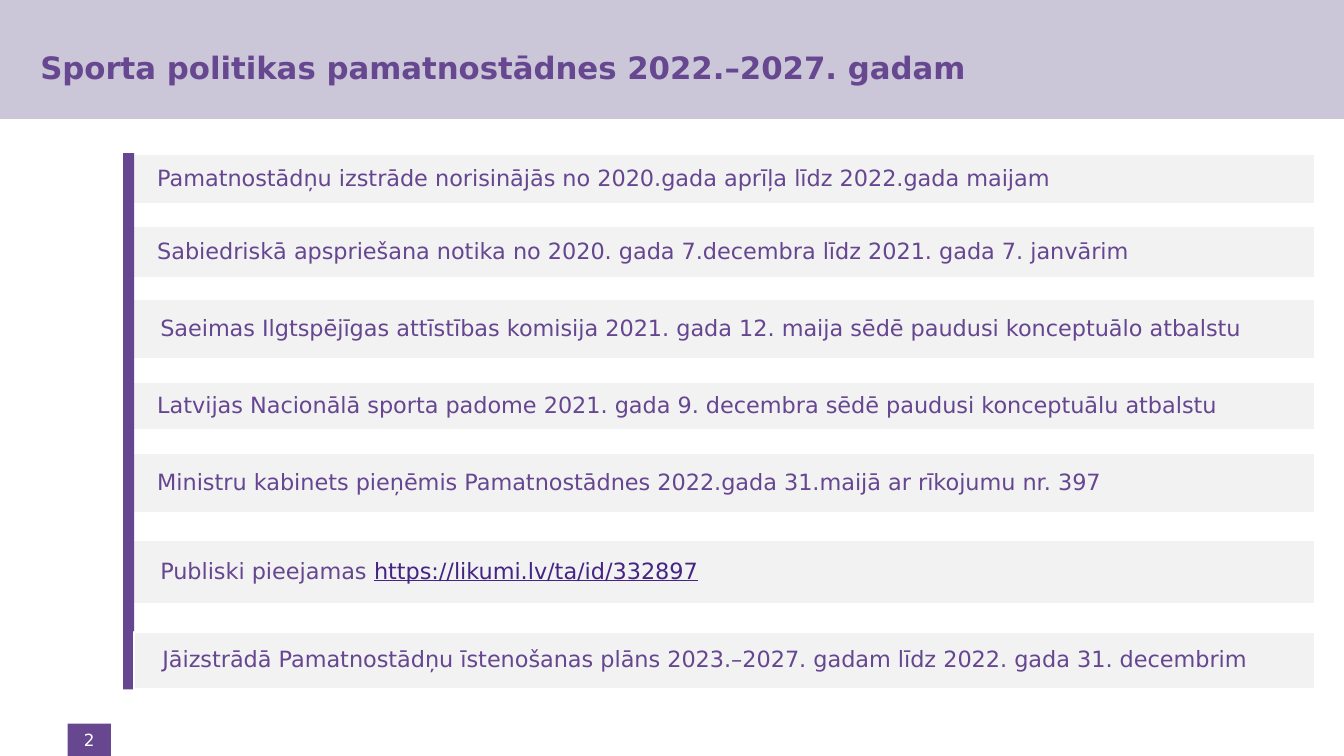
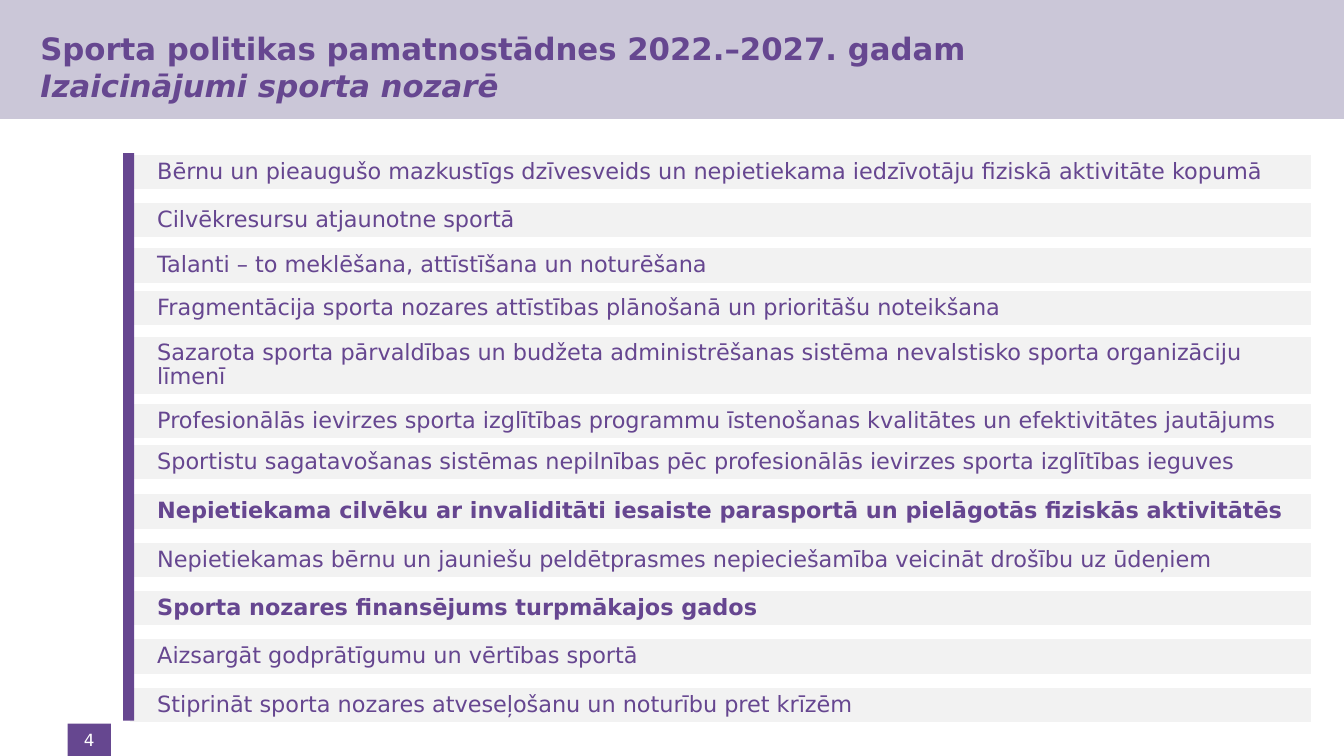
from pptx import Presentation
from pptx.dml.color import RGBColor
from pptx.enum import shapes, text
from pptx.util import Inches, Pt

FONT = "DejaVu Sans"
BAND, PURPLE, SPINE = "CBC7D8", "664790", "664690"
ROW_FILL, WHITE, LINK = "F2F2F2", "FFFFFF", "442583"

TITLE = "Sporta politikas pamatnostādnes 2022.–2027. gadam"
TITLE_STYLE = {"size": Pt(22), "bold": True, "color": PURPLE}
ROW_STYLE = {"size": Pt(16), "color": SPINE}
NUMBER_STYLE = {"size": Pt(12), "color": WHITE}
STRONG = {"bold": True}
ADDRESS = {"color": LINK, "underline": True}

TITLE_INSETS = (0, 0.05, 0.1, 0.05)
ROW_INSETS = (0.28, 0.05, 0.09, 0.05)
NUMBER_INSETS = (0.04, 0.04, 0.04, 0.04)

SPINE_WIDTH = 0.11
ROW_OFFSET = 0.06  # rows start underneath the spine

# Each row: top, height, runs of (words, style)
TIMELINE = [
    (1.52, 0.51, [("Pamatnostādņu izstrāde norisinājās no 2020.gada aprīļa "
                   "līdz 2022.gada maijam", {})]),
    (2.24, 0.52, [("Sabiedriskā apspriešana notika no 2020. gada 7.decembra "
                   "līdz 2021. gada 7. janvārim", {})]),
    (2.96, 0.61, [("Saeimas Ilgtspējīgas attīstības komisija 2021. gada "
                   "12. maija sēdē paudusi konceptuālo atbalstu", {})]),
    (3.79, 0.48, [("Latvijas Nacionālā sporta padome 2021. gada 9. decembra "
                   "sēdē paudusi konceptuālu atbalstu", {})]),
    (4.49, 0.6, [("Ministru kabinets pieņēmis Pamatnostādnes 2022.gada "
                  "31.maijā ar rīkojumu nr. 397", {})]),
    (5.35, 0.65, [("Publiski pieejamas ", {}),
                  ("https://likumi.lv/ta/id/332897", ADDRESS)]),
]
NEXT_STEP = (6.27, 0.57, [("Jāizstrādā Pamatnostādņu īstenošanas plāns "
                           "2023.–2027. gadam līdz 2022. gada 31. decembrim", {})])
INDENTS = {2.96: 0.03, 5.35: 0.03}

CHALLENGES = [
    (1.52, 0.37, [("Bērnu un pieaugušo mazkustīgs dzīvesveids un nepietiekama "
                   "iedzīvotāju fiziskā aktivitāte kopumā", {})]),
    (2.0, 0.37, [("Cilvēkresursu atjaunotne sportā", {})]),
    (2.45, 0.37, [("Talanti – to meklēšana, attīstīšana un noturēšana", {})]),
    (2.87, 0.37, [("Fragmentācija sporta nozares attīstības plānošanā un "
                   "prioritāšu noteikšana", {})]),
    (3.33, 0.59, [("Sazarota sporta pārvaldības un budžeta administrēšanas "
                   "sistēma nevalstisko sporta organizāciju līmenī", {})]),
    (3.99, 0.37, [("Profesionālās ievirzes sporta izglītības programmu "
                   "īstenošanas kvalitātes un efektivitātes jautājums", {})]),
    (4.4, 0.37, [("Sportistu sagatavošanas sistēmas nepilnības pēc "
                  "profesionālās ievirzes sporta izglītības ieguves", {})]),
    (4.89, 0.37, [("Nepietiekama cilvēku ar invaliditāti iesaiste parasportā "
                   "un pielāgotās fiziskās aktivitātēs", STRONG)]),
    (5.37, 0.37, [("Nepietiekamas bērnu un jauniešu peldētprasmes "
                   "nepieciešamība veicināt drošību uz ūdeņiem", {})]),
    (5.85, 0.37, [("Sporta nozares finansējums turpmākajos gados", STRONG)]),
    (6.33, 0.37, [("Aizsargāt godprātīgumu un vērtības sportā", {})]),
    (6.81, 0.37, [("Stiprināt sporta nozares atveseļošanu un noturību pret "
                   "krīzēm", {})]),
]


def color(hex_string):
    return RGBColor.from_string(hex_string)


def add_block(slide, box, fill, outline=None):
    block = slide.shapes.add_shape(shapes.MSO_SHAPE.RECTANGLE, *map(Inches, box))
    block.shadow.inherit = False
    block.fill.solid()
    block.fill.fore_color.rgb = color(fill)
    if outline:
        block.line.color.rgb = color(outline)
        block.line.width = Pt(2)
    else:
        block.line.fill.background()
    return block


def write(frame, lines, style, insets, align=text.PP_ALIGN.LEFT, spacing=1.0):
    """Fill a frame with one paragraph; each line is a list of (words, style) runs."""
    frame.word_wrap = True
    frame.vertical_anchor = text.MSO_ANCHOR.MIDDLE
    for side, inset in zip(("left", "top", "right", "bottom"), insets):
        setattr(frame, f"margin_{side}", Inches(inset))
    paragraph = frame.paragraphs[0]
    paragraph.alignment = align
    paragraph.line_spacing = spacing
    for index, runs in enumerate(lines):
        if index:
            paragraph.add_line_break()
        for words, extra in runs:
            run = paragraph.add_run()
            run.text = words
            for key, value in {"name": FONT, **style, **extra}.items():
                if key == "color":
                    run.font.color.rgb = color(value)
                else:
                    setattr(run.font, key, value)


def add_frame(deck, number, title_lines):
    """Add a slide with the title band, title and page number."""
    slide = deck.slides.add_slide(deck.slide_layouts[6])
    add_block(slide, (0, 0, 13.33, 1.18), BAND)
    title = slide.shapes.add_textbox(*map(Inches, (0.4, 0.04, 12.15, 1.25)))
    write(title.text_frame, title_lines, TITLE_STYLE, TITLE_INSETS)
    badge = add_block(slide, (0.67, 7.18, 0.43, 0.32), PURPLE)
    write(badge.text_frame, [[(str(number), {})]], NUMBER_STYLE,
          NUMBER_INSETS, text.PP_ALIGN.CENTER)
    return slide


def add_row(slide, left, right, row):
    top, height, runs = row
    bar = add_block(slide, (left, top, right - left, height), ROW_FILL, WHITE)
    write(bar.text_frame, [runs], ROW_STYLE, ROW_INSETS, spacing=0.9)


def add_list(slide, box, rows, indents=None):
    """Place the rows in the box, then the spine along its left edge."""
    left, top, width, height = box
    for row in rows:
        indent = (indents or {}).get(row[0], 0)
        add_row(slide, left + ROW_OFFSET + indent, left + width, row)
    add_block(slide, (left, top, SPINE_WIDTH, height), SPINE)


def timeline_slide(deck):
    left, top, width, height = box = (1.22, 1.52, 11.83, 5.32)
    slide = add_frame(deck, 2, [[(TITLE, {})]])
    add_list(slide, box, TIMELINE, INDENTS)
    add_row(slide, left + SPINE_WIDTH, left + width, NEXT_STEP)


def challenges_slide(deck):
    slide = add_frame(deck, 4, [[(TITLE, {})],
                                [("Izaicinājumi sporta nozarē", {"italic": True})]])
    add_list(slide, (1.22, 1.52, 11.8, 5.63), CHALLENGES)


def main():
    deck = Presentation()
    deck.slide_width, deck.slide_height = Inches(13.33), Inches(7.5)
    timeline_slide(deck)
    challenges_slide(deck)
    deck.save("out.pptx")


if __name__ == "__main__":
    main()
